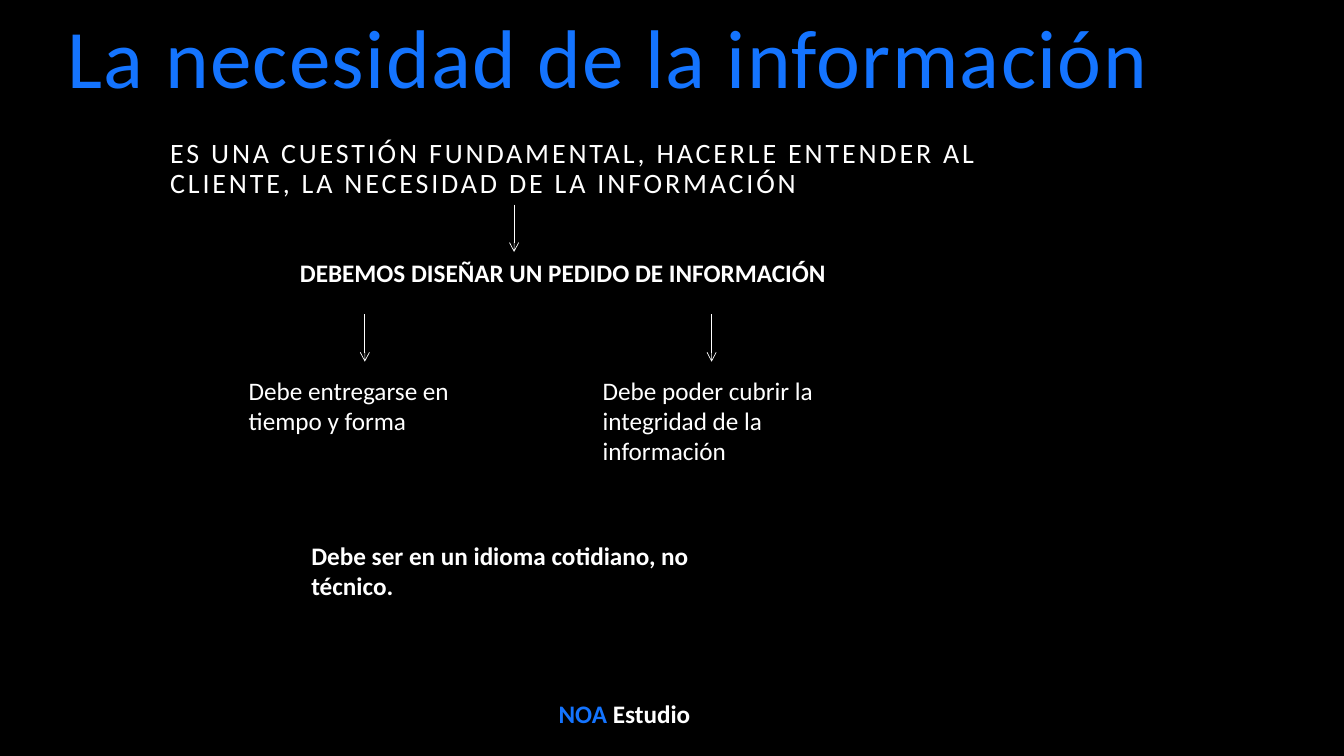
from lxml.etree import SubElement
from pptx import Presentation
from pptx.dml.color import RGBColor
from pptx.enum.shapes import MSO_CONNECTOR as Connector
from pptx.enum.text import MSO_ANCHOR as Anchor, MSO_AUTO_SIZE as AutoSize, PP_ALIGN as Align
from pptx.oxml.ns import qn
from pptx.util import Pt

COLORS = {"background": "000000", "accent": "1474FF", "text": "FFFFFF"}
FONT = "Calibri"
ARROW_LENGTH = 33.8


class SlideBuilder:
    def __init__(self, presentation):
        self.slide = presentation.slides.add_slide(presentation.slide_layouts[5])
        fill = self.slide.background.fill
        fill.solid()
        fill.fore_color.rgb = self.color("background")

    def color(self, name):
        return RGBColor.from_string(COLORS[name])

    def fill_text(self, shape, runs, size=18, bold=False, align=Align.LEFT,
                  line_spacing=1.0, tracking=0, anchor=Anchor.TOP, auto_size=AutoSize.NONE):
        """Fill the shape with one paragraph of (text, color name) runs; tracking is in points."""
        frame = shape.text_frame
        frame_format = {"word_wrap": True, "auto_size": auto_size, "vertical_anchor": anchor}
        for name, value in frame_format.items():
            setattr(frame, name, value)
        paragraph = frame.paragraphs[0]
        paragraph_format = {"alignment": align, "line_spacing": line_spacing, "space_before": Pt(0)}
        for name, value in paragraph_format.items():
            setattr(paragraph, name, value)
        for text, color in runs:
            run = paragraph.add_run()
            run.text = text
            for name, value in {"name": FONT, "size": Pt(size), "bold": bold}.items():
                setattr(run.font, name, value)
            run.font.color.rgb = self.color(color)
            if tracking:
                run.font._element.set("spc", str(tracking * 100))

    def title(self, text, left, top, width, height):
        shape = self.slide.shapes.title
        box = {"left": left, "top": top, "width": width, "height": height}
        for name, value in box.items():
            setattr(shape, name, Pt(value))
        self.fill_text(shape, [(text, "accent")], size=59.4, line_spacing=0.8,
                       tracking=1, anchor=Anchor.BOTTOM)

    def text(self, runs, left, top, width, height, **style):
        shape = self.slide.shapes.add_textbox(Pt(left), Pt(top), Pt(width), Pt(height))
        if isinstance(runs, str):
            runs = [(runs, "text")]
        self.fill_text(shape, runs, **style)

    def down_arrow(self, x, top):
        arrow = self.slide.shapes.add_connector(
            Connector.STRAIGHT, Pt(x), Pt(top), Pt(x), Pt(top + ARROW_LENGTH))
        arrow.line.width = Pt(0.5)
        arrow.line.color.rgb = self.color("text")
        SubElement(arrow.line._get_or_add_ln(), qn("a:tailEnd"), type="arrow")
        SubElement(arrow._element.spPr, qn("a:effectLst"))


def main():
    presentation = Presentation()
    presentation.slide_width = Pt(960)
    presentation.slide_height = Pt(540)

    builder = SlideBuilder(presentation)
    builder.title("La necesidad de la información", 41, 16.6, 821.5, 61.9)
    builder.text("ES UNA CUESTIÓN FUNDAMENTAL, HACERLE ENTENDER AL CLIENTE, "
                 "LA NECESIDAD DE LA INFORMACIÓN",
                 114.5, 95.8, 648, 95.8, size=20, line_spacing=0.9, tracking=2)

    growing = {"auto_size": AutoSize.SHAPE_TO_FIT_TEXT}
    strong = {"bold": True, **growing}
    builder.text("DEBEMOS DISEÑAR UN PEDIDO DE INFORMACIÓN",
                 50.4, 180, 703.4, 29, align=Align.CENTER, **strong)

    for x, top in [(367.2, 146.2), (260.6, 224.6), (508.3, 224.6)]:
        builder.down_arrow(x, top)

    requirements = [
        ("Debe entregarse en tiempo y forma", 170.6, 51),
        ("Debe poder cubrir la integridad de la información", 423.4, 72.7),
    ]
    for text, left, height in requirements:
        builder.text(text, left, 264.2, 174.2, height, **growing)

    builder.text("Debe ser en un idioma cotidiano, no técnico.",
                 215.3, 382.3, 331.9, 51, **strong)
    builder.text([("NOA", "accent"), (" Estudio", "text")],
                 316.8, 495.4, 258.5, 29, align=Align.CENTER, **strong)

    presentation.save("out.pptx")


if __name__ == "__main__":
    main()
